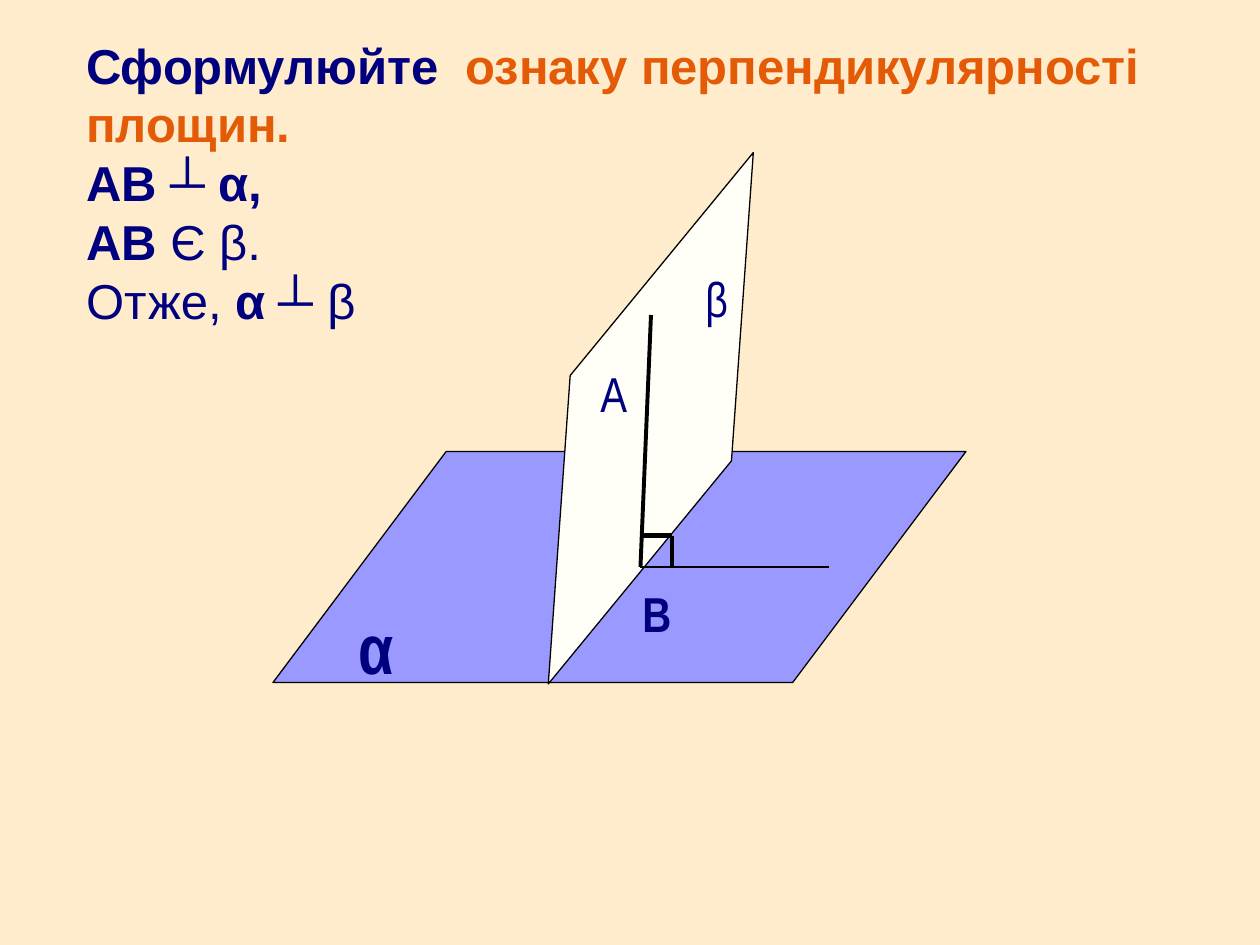
"""Build a slide on the perpendicularity criterion for two planes."""
from dataclasses import dataclass

from lxml import etree
from pptx import Presentation
from pptx.dml.color import RGBColor
from pptx.enum import shapes, text
from pptx.oxml.ns import qn
from pptx.util import Pt


@dataclass(frozen=True)
class Theme:
    paper: str = "FEECCD"
    navy: str = "00007E"
    orange: str = "E35B07"
    ink: str = "000000"
    alpha_plane: str = "9999FF"
    beta_plane: str = "FFFFF7"
    title_font: str = "Arial"
    label_font: str = "Arial Narrow"
    body_size: int = 28
    large_size: int = 40
    thin: float = 0.75
    medium: float = 2.25
    thick: float = 3


THEME = Theme()

STATEMENT = [
    [("Сформулюйте ", THEME.navy, True),
     (" ознаку перпендикулярності площин.", THEME.orange, True)],
    [("АВ ┴ α,", THEME.navy, True)],
    [("АВ ", THEME.navy, True), ("Є β.", THEME.navy, False)],
    [("Отже, ", THEME.navy, False), ("α ┴ ", THEME.navy, True),
     ("β", THEME.navy, False)],
]


def rgb(value):
    """Return the colour for a hex string."""
    return RGBColor.from_string(value)


def fill_title(title):
    """Place the title and write the statement, one paragraph a line."""
    title.left, title.top, title.width, title.height = Pt(42), Pt(20), Pt(648), Pt(90)
    frame = title.text_frame
    frame.auto_size = text.MSO_AUTO_SIZE.NONE
    frame.vertical_anchor = text.MSO_ANCHOR.TOP
    frame.margin_top = 0
    for index, spans in enumerate(STATEMENT):
        para = frame.paragraphs[0] if index == 0 else frame.add_paragraph()
        para.alignment = text.PP_ALIGN.LEFT
        para.font.name = THEME.title_font
        para.font.size = Pt(THEME.body_size)
        for words, colour, bold in spans:
            span = para.add_run()
            span.text = words
            span.font.color.rgb = rgb(colour)
            span.font.bold = bold


def add_plane(slide, left, top, width, height, slant, colour, rotation=0):
    """Add a parallelogram that stands for a plane."""
    plane = slide.shapes.add_shape(
        shapes.MSO_SHAPE.PARALLELOGRAM, Pt(left), Pt(top), Pt(width), Pt(height))
    plane.adjustments[0] = slant
    plane.rotation = rotation
    plane.shadow.inherit = False
    plane.fill.solid()
    plane.fill.fore_color.rgb = rgb(colour)
    plane.line.color.rgb = rgb(THEME.ink)
    plane.line.width = Pt(THEME.thin)


def add_segment(slide, start, end, weight):
    """Add a straight line between two points."""
    segment = slide.shapes.add_connector(
        shapes.MSO_CONNECTOR.STRAIGHT, *map(Pt, start + end))
    segment.line.color.rgb = rgb(THEME.ink)
    segment.line.width = Pt(weight)
    etree.SubElement(segment._element.spPr, qn("a:effectLst"))


def add_label(slide, letter, left, top, width, height, size, bold=False):
    """Add a one-letter name beside a point or on a plane."""
    box = slide.shapes.add_textbox(Pt(left), Pt(top), Pt(width), Pt(height))
    box.text_frame.word_wrap = True
    para = box.text_frame.paragraphs[0]
    para.text = letter
    para.font.name = THEME.label_font
    para.font.size = Pt(size)
    para.font.bold = bold
    para.font.color.rgb = rgb(THEME.navy)


def main():
    """Build the slide and save it."""
    deck = Presentation()
    deck.slide_width, deck.slide_height = Pt(720), Pt(540)
    page = deck.slides.add_slide(deck.slide_layouts[5])
    page.background.fill.solid()
    page.background.fill.fore_color.rgb = rgb(THEME.paper)
    fill_title(page.shapes.title)

    add_plane(page, 156, 258, 396, 132, 0.75, THEME.alpha_plane)
    add_plane(page, 217.4, 187.9, 309, 102.2, 1.41, THEME.beta_plane, 129.4)
    add_label(page, "α", 198, 342, 30, 55.4, THEME.large_size, True)

    foot, corner = (366, 324), (384, 306)
    add_segment(page, (372, 180), foot, THEME.medium)
    add_segment(page, foot, (474, foot[1]), THEME.thin)
    add_segment(page, (foot[0], corner[1]), corner, THEME.thick)
    add_segment(page, corner, (corner[0], foot[1]), THEME.medium)

    add_label(page, "β", 396, 150, 18, 41, THEME.body_size)
    add_label(page, "В", 360, 330, 30, 41, THEME.body_size, True)
    add_label(page, "А", 336, 204, 30, 41, THEME.body_size)
    deck.save("out.pptx")


if __name__ == "__main__":
    main()
